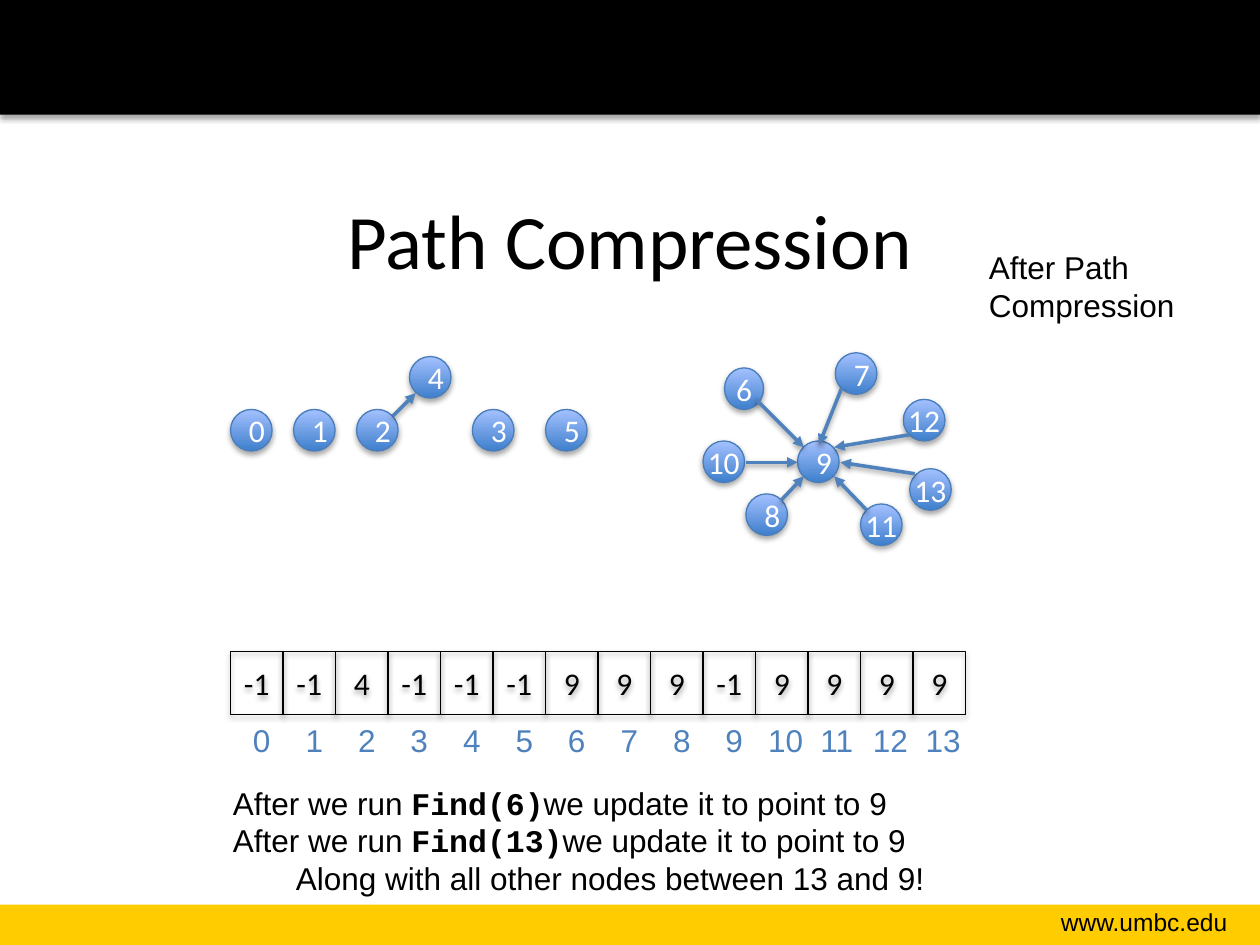
from pptx import Presentation
from pptx.dml.color import RGBColor
from pptx.enum import shapes, text
from pptx.oxml import parse_xml
from pptx.oxml.ns import nsdecls
from pptx.util import Inches, Pt

COLORS = {"black": "000000", "gold": "FFCC00", "white": "FFFFFF", "blue": "4F81BD"}
SHAPE = shapes.MSO_SHAPE
ALIGN = text.PP_ALIGN
MIDDLE = text.MSO_ANCHOR.MIDDLE

prs = Presentation()
prs.slide_width, prs.slide_height = Inches(10), Inches(7.5)
slide = prs.slides.add_slide(prs.slide_layouts[6])


def style(paragraph, font, size, color, align=ALIGN.LEFT):
    paragraph.alignment = align
    paragraph.font.name = font
    paragraph.font.size = Pt(size)
    paragraph.font.color.rgb = RGBColor.from_string(COLORS[color])


def add_label(words, box, size=18, color="black", font="Arial", align=ALIGN.LEFT, wrap=True):
    label = slide.shapes.add_textbox(*map(Inches, box))
    label.text_frame.word_wrap = wrap
    label.text_frame.text = words
    style(label.text_frame.paragraphs[0], font, size, color, align)
    return label.text_frame


footer = slide.shapes.add_shape(SHAPE.RECTANGLE, 0, Inches(7.18), Inches(10), Inches(0.32))
footer.shadow.inherit = False
header = slide.shapes.add_shape(SHAPE.RECTANGLE, 0, 0, Inches(10), Inches(0.91))
for band, color in ((footer, "gold"), (header, "black")):
    band.fill.solid()
    band.fill.fore_color.rgb = RGBColor.from_string(COLORS[color])
    band.line.fill.background()

add_label("www.umbc.edu", (7.85, 7.15, 1.99, 0.34), 14, align=ALIGN.RIGHT)
title = add_label("Path Compression", (0.5, 1.27, 9, 1.25), 44, font="Calibri", align=ALIGN.CENTER)
title.vertical_anchor = MIDDLE

nodes = [
    (0, 1.83, 3.25), (1, 2.33, 3.25), (2, 2.83, 3.25), (3, 3.75, 3.25), (4, 3.25, 2.83),
    (5, 4.33, 3.25), (6, 5.75, 2.92), (7, 6.63, 2.8), (8, 5.92, 3.92), (9, 6.33, 3.5),
    (10, 5.58, 3.5), (11, 6.83, 4), (12, 7.17, 3.17), (13, 7.22, 3.72),
]
for number, left, top in nodes:
    width = 0.31 if number == 6 else 0.33
    node = slide.shapes.add_shape(
        SHAPE.OVAL, Inches(left), Inches(top), Inches(width), Inches(0.33))
    node.text_frame.text = str(number)
    node.text_frame.word_wrap = number not in (6, 10, 11, 12, 13)
    node.text_frame.vertical_anchor = MIDDLE
    style(node.text_frame.paragraphs[0], "Calibri", 18, "white", ALIGN.CENTER)

parent_links = [
    (3.12, 3.3, 3.3, 3.12), (6, 3.17, 6.38, 3.55), (6.68, 3.08, 6.5, 3.53),
    (6.2, 3.97, 6.38, 3.78), (5.92, 3.67, 6.33, 3.67), (6.88, 4.05, 6.62, 3.78),
    (7.22, 3.45, 6.62, 3.55), (7.26, 3.76, 6.67, 3.67),
]
for ends in parent_links:
    link = slide.shapes.add_connector(shapes.MSO_CONNECTOR.STRAIGHT, *map(Inches, ends))
    link.line.color.rgb = RGBColor.from_string(COLORS["blue"])
    link.line.width = Pt(2)
    link.line._get_or_add_ln().append(
        parse_xml(f'<a:tailEnd {nsdecls("a")} type="triangle"/>'))

parents = [-1, -1, 4, -1, -1, -1, 9, 9, 9, -1, 9, 9, 9, 9]
cell_width = 5 / 12
for index, parent in enumerate(parents):
    left = 1.83 + index * cell_width
    cell = slide.shapes.add_shape(
        SHAPE.RECTANGLE, Inches(left), Inches(5.17), Inches(cell_width), Inches(0.5))
    cell.fill.background()
    cell.line.color.rgb = RGBColor.from_string(COLORS["black"])
    cell.line.width = Pt(0.75)
    cell.text_frame.text = str(parent)
    cell.text_frame.word_wrap = index not in (6, 12, 13)
    cell.text_frame.vertical_anchor = MIDDLE
    style(cell.text_frame.paragraphs[0], "Calibri", 18, "black", ALIGN.CENTER)

    offset, width = (0.08, 0.34) if index < 10 else (0, 0.48)
    add_label(str(index), (left + offset, 5.67, width, 0.4), color="blue", wrap=False)

add_label("After Path Compression", (7.75, 1.92, 1.75, 0.71))

notes = add_label("After we run ", (1.75, 6.17, 5.74, 1.01), wrap=False)
for line, call in enumerate(("Find(6)", "Find(13)")):
    paragraph = notes.paragraphs[0]
    if line:
        paragraph = notes.add_paragraph()
        paragraph.add_run().text = "After we run "
        style(paragraph, "Arial", 18, "black")
    code = paragraph.add_run()
    code.text = call
    code.font.name = "Courier New"
    code.font.bold = True
    paragraph.add_run().text = "we update it to point to 9"

detail = notes.add_paragraph()
detail.text = "Along with all other nodes between 13 and 9!"
detail.level = 1
indents = detail._p.get_or_add_pPr()
indents.set("marL", str(Inches(0.81)))
indents.set("indent", str(Inches(-0.31)))
style(detail, "Arial", 18, "black")

prs.save("out.pptx")
